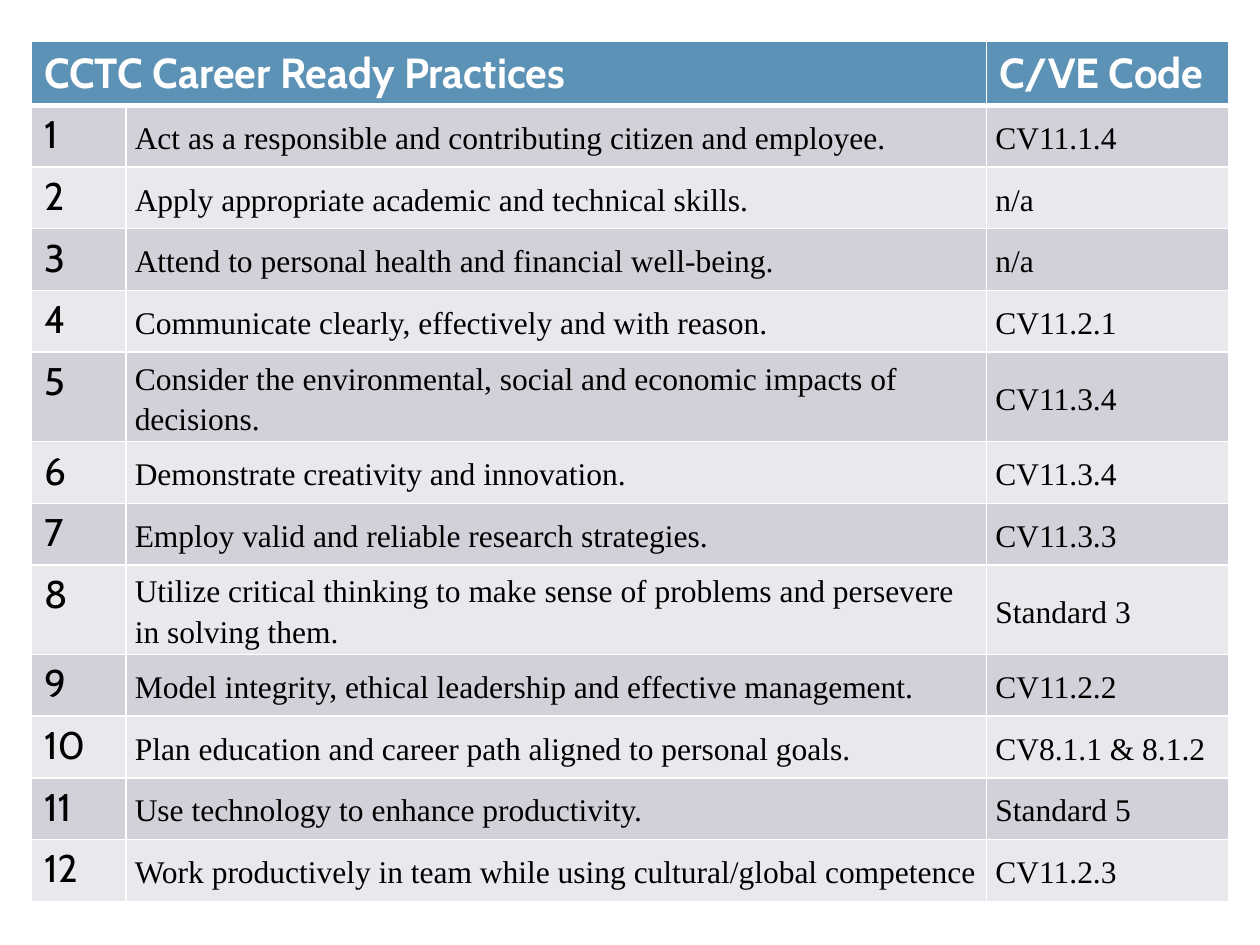
from lxml import etree
from pptx import Presentation, util as u
from pptx.dml.color import RGBColor
from pptx.enum import text as t
from pptx.oxml.ns import qn

WHITE = RGBColor(0xFF, 0xFF, 0xFF)
BLACK = RGBColor(0, 0, 0)
BLUE = RGBColor(0x5C, 0x92, 0xB5)
DARK = RGBColor(0xD1, 0xD1, 0xDA)
LIGHT = RGBColor(0xE9, 0xE9, 0xED)
SANS, SERIF = "Cabin", "Times New Roman"

WIDTHS = [0.75, 6.83, 1.92]
HEAD, ROW, TALL = 0.48, 0.49, 0.71
TALL_ROWS = (5, 8)
ITEMS = [
    ("Act as a responsible and contributing citizen and employee.", "CV11.1.4"),
    ("Apply appropriate academic and technical skills.", "n/a"),
    ("Attend to personal health and financial well-being.", "n/a"),
    ("Communicate clearly, effectively and with reason.", "CV11.2.1"),
    ("Consider the environmental, social and economic impacts of decisions.", "CV11.3.4"),
    ("Demonstrate creativity and innovation.", "CV11.3.4"),
    ("Employ valid and reliable research strategies.", "CV11.3.3"),
    ("Utilize critical thinking to make sense of problems and persevere in solving them.",
     "Standard 3"),
    ("Model integrity, ethical leadership and effective management.", "CV11.2.2"),
    ("Plan education and career path aligned to personal goals.", "CV8.1.1 & 8.1.2"),
    ("Use technology to enhance productivity.", "Standard 5"),
    ("Work productively in team while using cultural/global competence", "CV11.2.3"),
]


def write(frame, words, size=18, font=SERIF, color=BLACK, bold=False, space=None):
    """Put one formatted paragraph in a text frame."""
    para = frame.paragraphs[0]
    if space:
        para.line_spacing = space
    run = para.add_run()
    run.text = words
    run.font.size, run.font.name, run.font.bold = u.Pt(size), font, bold
    run.font.color.rgb = color


def paint(cell, fill, top=1, base=1):
    """Give a cell white borders and a plain fill."""
    props = cell._tc.get_or_add_tcPr()
    for side, width in zip("LRTB", (1, 1, top, base)):
        line = etree.SubElement(props, qn(f"a:ln{side}"), w=str(u.Pt(width)))
        solid = etree.SubElement(line, qn("a:solidFill"))
        etree.SubElement(solid, qn("a:srgbClr"), val=str(WHITE))
    cell.fill.solid()
    cell.fill.fore_color.rgb = fill


def entry(cell, words):
    """Fill a body cell with vertically centred serif text."""
    cell.vertical_anchor = t.MSO_ANCHOR.MIDDLE
    cell.margin_left = cell.margin_right = u.Inches(0.07)
    cell.margin_top = cell.margin_bottom = 0
    write(cell.text_frame, words, space=1.15)


def header(table):
    """Build the header row with its merged title."""
    for col in range(len(WIDTHS)):
        paint(table.cell(0, col), BLUE, base=3)
    table.cell(0, 0).merge(table.cell(0, 1))
    for col, words in ((0, "CCTC Career Ready Practices"), (2, "C/VE Code")):
        write(table.cell(0, col).text_frame, words, size=24, font=SANS,
              color=WHITE, bold=True)


def body(table):
    """Build the numbered rows in alternating shades."""
    for row, (skill, code) in enumerate(ITEMS, 1):
        for col in range(len(WIDTHS)):
            paint(table.cell(row, col), DARK if row % 2 else LIGHT,
                  top=3 if row == 1 else 1)
        write(table.cell(row, 0).text_frame, str(row), size=22, font=SANS)
        entry(table.cell(row, 1), skill)
        entry(table.cell(row, 2), code)


def grid(slide):
    """Add the empty table with its column and row sizes."""
    highs = [HEAD] + [TALL if n in TALL_ROWS else ROW
                      for n in range(1, len(ITEMS) + 1)]
    table = slide.shapes.add_table(
        len(highs), len(WIDTHS), u.Inches(0.25), u.Inches(0.33),
        u.Inches(sum(WIDTHS)), u.Inches(sum(highs))).table
    for col, width in zip(table.columns, WIDTHS):
        col.width = u.Inches(width)
    for row, high in zip(table.rows, highs):
        row.height = u.Inches(high)
    return table


def main():
    """Build and save the slide."""
    deck = Presentation()
    deck.slide_width, deck.slide_height = u.Inches(10), u.Inches(7.5)
    table = grid(deck.slides.add_slide(deck.slide_layouts[6]))
    header(table)
    body(table)
    deck.save("out.pptx")


if __name__ == "__main__":
    main()
